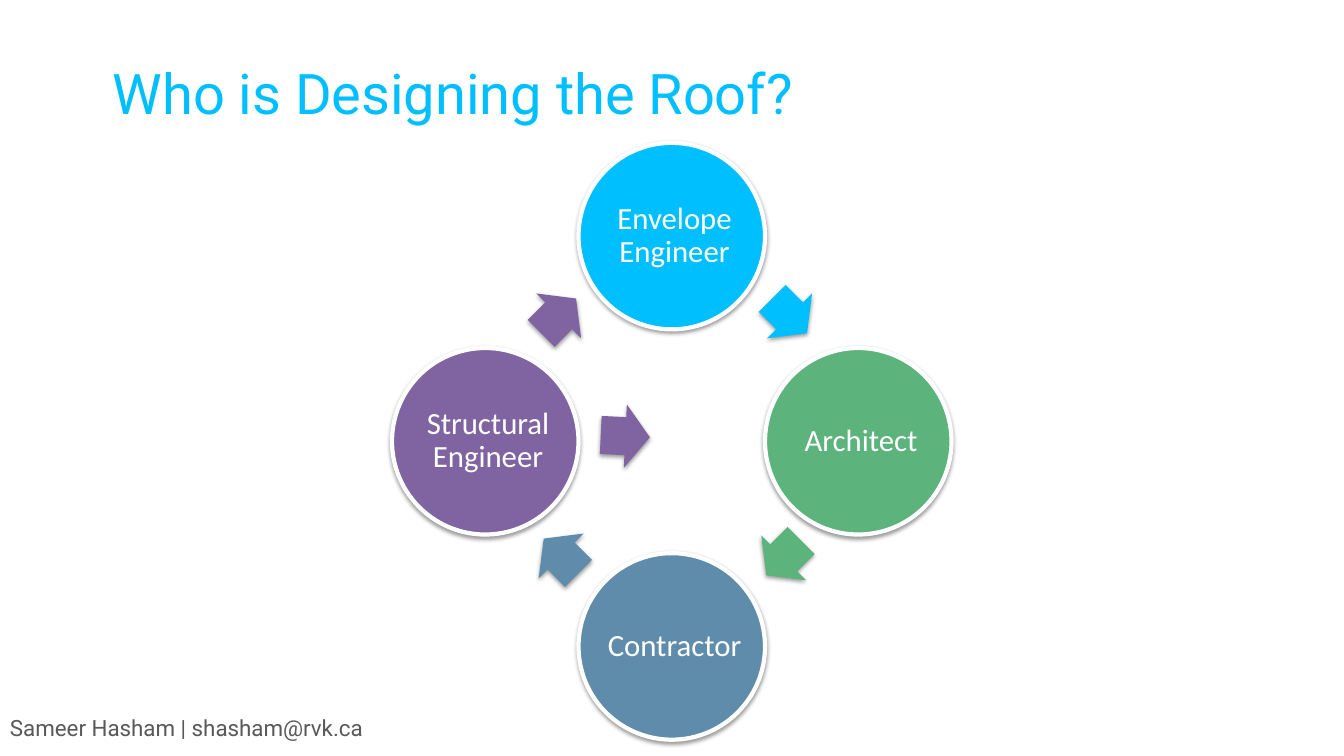
from lxml import etree
from pptx import Presentation
from pptx import util as u
from pptx.dml.color import RGBColor
from pptx.enum import shapes, text
from pptx.oxml.ns import qn

THEME = {
    "sky": "00BFFF", "green": "5CB37C", "steel": "608CAB",
    "plum": "8064A2", "white": "FFFFFF", "gray": "595959",
    "head": 40, "role": 22, "foot": 16,
    "main": "Roboto", "ring": "Calibri",
}
TITLE = "Who is Designing the Roof?"
FOOTER = "Sameer Hasham | shasham@rvk.ca"
ROLES = [
    ("Envelope Engineer", "sky", (0, -1)),
    ("Architect", "green", (1, 0)),
    ("Contractor", "steel", (0, 1)),
    ("Structural Engineer", "plum", (-1, 0)),
]
ARROWS = [
    ("plum", (-1.17, -0.13), 2.7),
    ("sky", (2.97, -3.16), 45),
    ("green", (2.82, 2.94), 135),
    ("steel", (-2.79, 2.89), 225),
    ("plum", (-2.85, -3.16), 315),
]
MID = (16.93, 11.12)
REACH = (4.7, 5.17)
DISC = (4.7, 4.7)
LABEL = (3.48, 3.33)
ARROW = (1.24, 1.6)
NUDGE = 0.07

deck = Presentation()
deck.slide_width, deck.slide_height = u.Cm(33.87), u.Cm(19.05)
slide = deck.slides.add_slide(deck.slide_layouts[6])


def color(key):
    return RGBColor.from_string(THEME[key])


def frame(spot, size):
    left, top = (m + s - d / 2 for m, s, d in zip(MID, spot, size))
    return [u.Cm(v) for v in (left, top, *size)]


def shade(shape):
    shape.shadow.inherit = False
    glow = shape._element.spPr.find(qn("a:effectLst"))
    drop = etree.SubElement(glow, qn("a:outerShdw"), blurRad="39370",
                            dist="20320", dir="5400000", rotWithShape="0")
    tint = etree.SubElement(drop, qn("a:srgbClr"), val="000000")
    etree.SubElement(tint, qn("a:alpha"), val="38000")


def draw(kind, box, key):
    shape = slide.shapes.add_shape(kind, *box)
    shape.fill.solid()
    shape.fill.fore_color.rgb = color(key)
    shape.line.fill.background()
    shade(shape)
    return shape


def write(box, words, size, face, key):
    body = slide.shapes.add_textbox(*box).text_frame
    body.word_wrap = True
    para = body.paragraphs[0]
    run = para.add_run()
    run.text = words
    run.font.size = u.Pt(THEME[size])
    run.font.name = THEME[face]
    run.font.color.rgb = color(key)
    return body, para


def add_arrow(key, spot, turn):
    arrow = draw(shapes.MSO_SHAPE.RIGHT_ARROW, frame(spot, ARROW), key)
    arrow.adjustments[0], arrow.adjustments[1] = 0.6, 0.5
    arrow.rotation = turn


def add_role(name, key, way):
    x, y = (w * r for w, r in zip(way, REACH))
    disc = draw(shapes.MSO_SHAPE.OVAL, frame((x, y), DISC), key)
    disc.line.color.rgb = color("white")
    disc.line.width = u.Pt(3)
    body, para = write(frame((x + NUDGE, y), LABEL), name, "role", "ring", "white")
    body.vertical_anchor = text.MSO_ANCHOR.MIDDLE
    body.margin_left = body.margin_right = u.Cm(0.05)
    body.margin_top = body.margin_bottom = u.Cm(0.05)
    para.alignment = text.PP_ALIGN.CENTER
    para.line_spacing = 0.9


for item in ARROWS:
    add_arrow(*item)
for item in ROLES:
    add_role(*item)

head = [u.Cm(v) for v in (2.59, 1.57, 30.07, 3.81)]
_, para = write(head, TITLE, "head", "main", "sky")
para.line_spacing = u.Pt(42)
foot = [u.Cm(v) for v in (0, 17.88, 9.6, 0.94)]
write(foot, FOOTER, "foot", "main", "gray")

deck.save("out.pptx")
